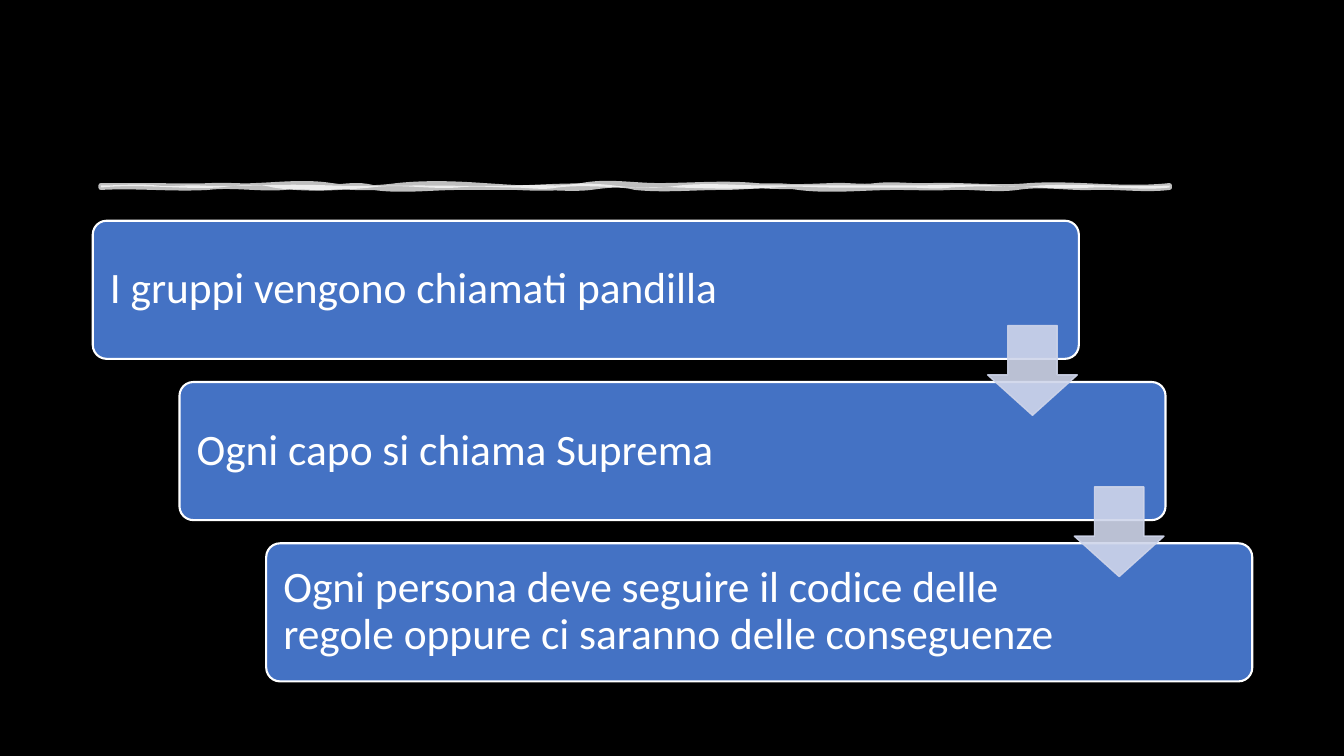
import pptx
import pptx.util
import pptx.dml.color
import pptx.enum.shapes
import pptx.enum.text
import pptx.oxml.ns
from lxml import etree

COLORS = {"background": "000000", "step": "4472C4", "arrow": "CFD5EA", "chalk": "FFFFFF"}
FONT = "Calibri"
LEFT, TOP = 0.92, 2.19     # grid origin, inches
COLUMN, ROW = 0.86, 1.6    # each step moves one column right and one row down
STEP_WIDTH, STEP_HEIGHT, ARROW_SIZE = 9.78, 1.37, 0.89

STEPS = [
    "I gruppi vengono chiamati pandilla",
    "Ogni capo si chiama Suprema",
    "Ogni persona deve seguire il codice delle regole oppure ci saranno delle conseguenze",
]

# Chalk edges: (end x in inches, two bends in hundredths of an inch), there and back
CHALK_START, CHALK_END, CHALK_TOP, CHALK_BOTTOM = 1, 11.6, 1.84, 1.86
OUTLINE_EDGES = (
    [(1.44, 0, 0), (2.09, 0, 1), (2.53, -1, 1), (3.29, -1, -4), (3.94, 3, 3),
     (4.8, -3, -2), (5.77, 2, 5), (6.53, -5, 0), (7.5, 0, -3), (8.25, 2, 1),
     (8.69, -1, 2), (9.24, -2, 1), (10.21, -1, 3), (11.6, -3, 5)],
    [(10.84, 3, -1), (10.09, 1, -4), (9.43, 3, -1), (8.89, 1, 0), (7.92, 0, 4),
     (7.16, -4, 0), (6.3, 0, 3), (5.86, -4, -2), (5.32, 2, 0), (4.56, 0, 0),
     (3.7, 0, 4), (3.26, -4, -1), (2.82, 1, -2), (2.06, 2, -3), (1, 2, -2)],
)
FILL_EDGES = (
    [(1.55, 0, -2), (1.98, 2, -1), (2.53, 1, 0), (3.29, -1, -1), (4.15, 1, 0),
     (5.12, 0, 1), (6.09, -1, -4), (6.74, 3, 3), (7.6, -3, 0), (8.36, 0, 0),
     (9.01, 0, 0), (9.87, 0, -2), (10.31, 2, 2), (11.6, -2, 2)],
    [(10.84, 3, -1), (10.3, 1, 1), (9.43, -1, -2), (9, 2, 0), (8.24, 0, 0),
     (7.69, 0, -2), (6.72, 2, 1), (6.28, -1, 0), (5.53, 0, -3), (5.09, 3, 0),
     (4.54, 0, -2), (3.68, 2, -4), (2.71, 3, 5), (2.17, -5, -2), (1, 2, -4)],
)


def add_part(parent, name, **attributes):
    return etree.SubElement(parent, pptx.oxml.ns.qn("a:" + name), attributes)


def add_command(outline, name, *points):
    """Add one drawing command; points are inches on the slide."""
    command = add_part(outline, name)
    for x, y in points:
        add_part(command, "pt",
                 x=str(pptx.util.Inches(x - CHALK_START)),
                 y=str(pptx.util.Inches(y - CHALK_TOP)))


def add_wavy_outline(outlines, edges, **hidden):
    outline = add_part(outlines, "path",
                       w=str(pptx.util.Inches(CHALK_END - CHALK_START)),
                       h=str(pptx.util.Inches(CHALK_BOTTOM - CHALK_TOP)), **hidden)
    start = CHALK_START
    add_command(outline, "moveTo", (start, CHALK_TOP))
    for edge, base in zip(edges, (CHALK_TOP, CHALK_BOTTOM)):
        if base == CHALK_BOTTOM:
            add_command(outline, "lnTo", (start, base))
        for end, *bends in edge:
            third = (end - start) / 3
            handles = [(start + third * (i + 1), base + bend / 100)
                       for i, bend in enumerate(bends)]
            add_command(outline, "cubicBezTo", *handles, (end, base))
            start = end
    add_part(outline, "close")


class StepSlide:
    def __init__(self, presentation):
        self.slide = presentation.slides.add_slide(presentation.slide_layouts[6])
        self.shapes = self.slide.shapes
        fill = self.slide.background.fill
        fill.solid()
        fill.fore_color.rgb = self.color("background")

    def color(self, name):
        return pptx.dml.color.RGBColor.from_string(COLORS[name])

    def paint(self, shape, fill, line, width=1, opacity=100):
        shape.shadow.inherit = False
        for part, name in ((shape.fill, fill), (shape.line.fill, line)):
            part.solid()
            part.fore_color.rgb = self.color(name)
        shape.line.width = pptx.util.Pt(width)
        if opacity < 100:
            for color in shape.element.spPr.iter(pptx.oxml.ns.qn("a:srgbClr")):
                add_part(color, "alpha", val=str(opacity * 1000))

    def preset(self, kind, column, row, width, height, adjustments):
        """Add a preset shape at a grid place, sized in inches."""
        shape = self.shapes.add_shape(
            kind,
            pptx.util.Inches(LEFT + column * COLUMN), pptx.util.Inches(TOP + row * ROW),
            pptx.util.Inches(width), pptx.util.Inches(height))
        for i, value in enumerate(adjustments):
            shape.adjustments[i] = value
        return shape

    def chalk_line(self):
        """Draw one stroke: a wavy outline and a wavy fill in the same shape."""
        corners = [(pptx.util.Inches(x), pptx.util.Inches(y)) for x, y in (
            (CHALK_START, CHALK_TOP), (CHALK_END, CHALK_TOP),
            (CHALK_END, CHALK_BOTTOM), (CHALK_START, CHALK_BOTTOM))]
        builder = self.shapes.build_freeform(*corners[0])
        builder.add_line_segments(corners[1:], close=True)
        stroke = builder.convert_to_shape()
        outlines = stroke.element.spPr.find(".//" + pptx.oxml.ns.qn("a:pathLst"))
        outlines.remove(outlines[0])
        add_wavy_outline(outlines, OUTLINE_EDGES, fill="none")
        add_wavy_outline(outlines, FILL_EDGES, stroke="0")
        self.paint(stroke, "chalk", "chalk", 3.5, 75)

    def step(self, index, words):
        box = self.preset(pptx.enum.shapes.MSO_SHAPE.ROUNDED_RECTANGLE,
                          index, index, STEP_WIDTH, STEP_HEIGHT, [0.1])
        self.paint(box, "step", "chalk", 1.5)
        frame = box.text_frame
        frame.word_wrap = True
        frame.vertical_anchor = pptx.enum.text.MSO_ANCHOR.MIDDLE
        frame.margin_left = frame.margin_top = frame.margin_bottom = pptx.util.Inches(0.13)
        frame.margin_right = pptx.util.Inches(1.89 if index else 1.53)
        paragraph = frame.paragraphs[0]
        paragraph.text = words
        paragraph.alignment = pptx.enum.text.PP_ALIGN.LEFT
        paragraph.line_spacing = 0.9
        paragraph.font.name = FONT
        paragraph.font.size = pptx.util.Pt(31)
        paragraph.font.color.rgb = self.color("chalk")

    def arrow(self, index):
        arrow = self.preset(pptx.enum.shapes.MSO_SHAPE.DOWN_ARROW,
                            index + 10.32, index + 0.65,
                            ARROW_SIZE, ARROW_SIZE, [0.55, 0.45])
        self.paint(arrow, "arrow", "arrow", opacity=90)


def main():
    presentation = pptx.Presentation()
    presentation.slide_width = pptx.util.Inches(13.33)
    presentation.slide_height = pptx.util.Inches(7.5)
    page = StepSlide(presentation)
    page.chalk_line()
    for index, words in enumerate(STEPS):
        page.step(index, words)
    for index in range(len(STEPS) - 1):
        page.arrow(index)
    presentation.save("out.pptx")


if __name__ == "__main__":
    main()
